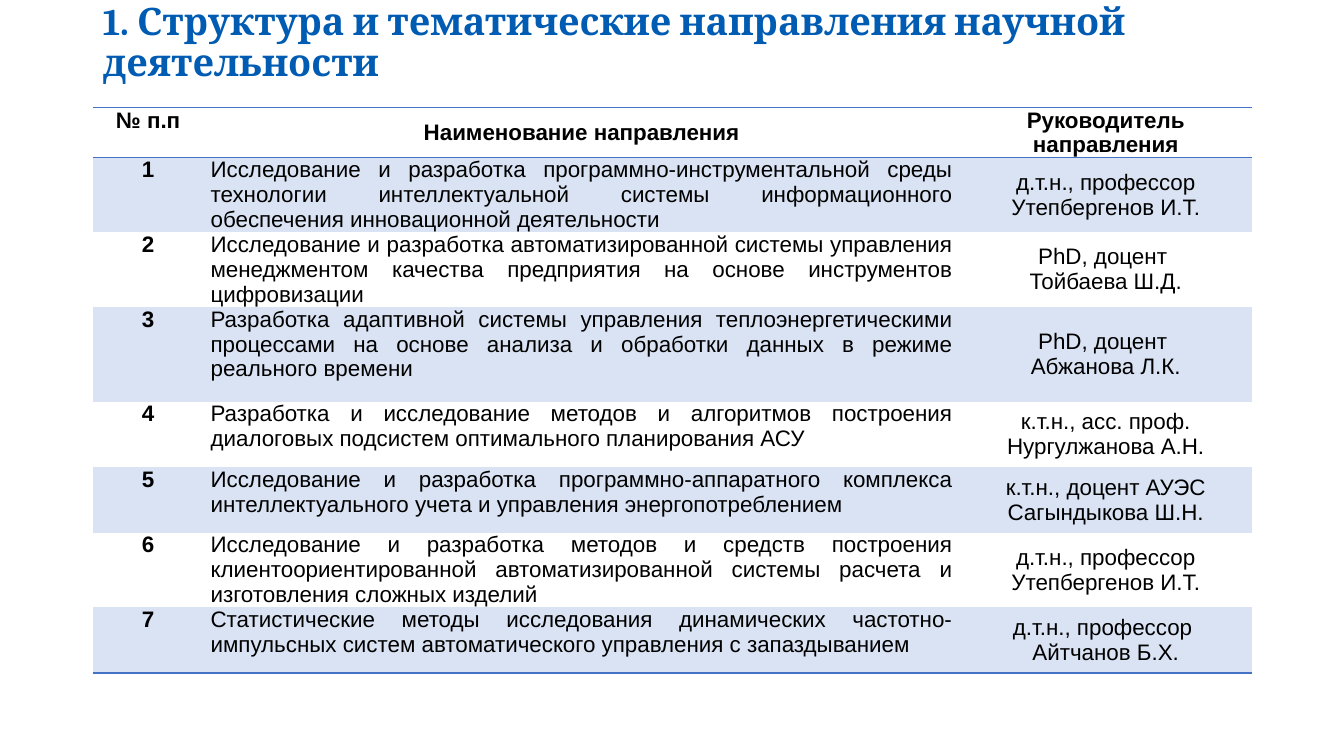
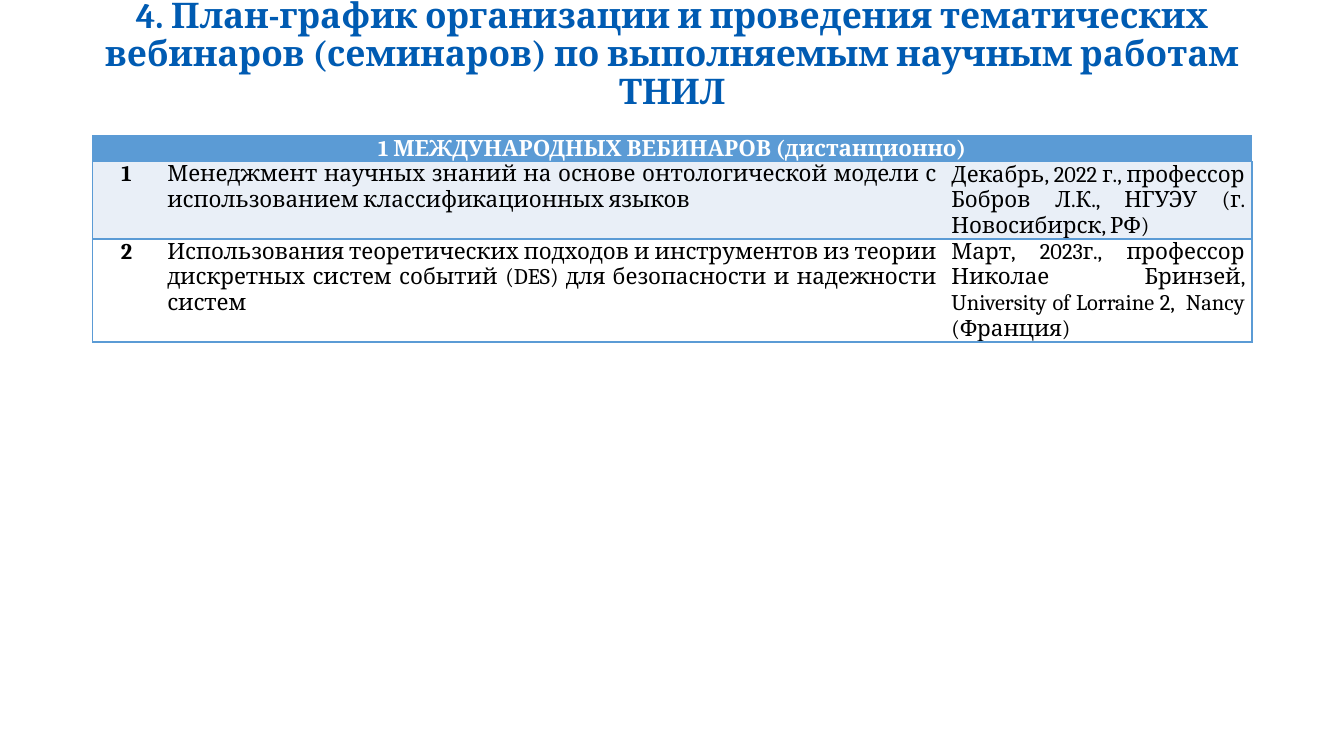
"""Build two slides on research directions and planned webinars."""
from dataclasses import dataclass

import pptx
import pptx.dml.color
import pptx.enum.text
import pptx.oxml
import pptx.oxml.ns
import pptx.util

WIDE = pptx.util.Inches(13.33)
HIGH = pptx.util.Inches(7.5)
LEFT = 6.9
SPAN = 86.25
INK = "000000"
WHITE = "FFFFFF"
NAVY = "005BB2"
BLUE = "4472C4"
PALE = "DAE3F3"
SKY = "5B9BD5"
MIST = "E9EFF7"
SERIF = "Cambria"
SANS = "Arial"
BARE = "{2D5ABB26-0587-4C30-8999-92F81FD0307C}"
ALIGN = pptx.enum.text.PP_ALIGN
ANCHOR = pptx.enum.text.MSO_ANCHOR


@dataclass(frozen=True)
class Title:
    text: str
    top: float
    width: float
    height: float
    size: float
    align: ALIGN
    anchor: ANCHOR


@dataclass(frozen=True)
class Style:
    font: str
    line: str
    band: str
    head: str | None
    label: str
    closed: bool
    last: ALIGN


@dataclass(frozen=True)
class Grid:
    top: float
    cols: tuple[float, ...]
    rows: tuple[float, ...]
    header: tuple[str, ...]
    items: tuple[tuple[str, str], ...]
    style: Style


@dataclass(frozen=True)
class Page:
    title: Title
    grid: Grid


PAGES = (
    Page(
        Title("1. Структура и тематические направления научной деятельности",
              4.27, 87.15, 7.6, 27, ALIGN.LEFT, ANCHOR.BOTTOM),
        Grid(
            14.27, (1.1, 7.5, 2.9),
            (4.67, 8.93, 8.67, 12.53, 8.67, 8.67, 9.33, 8.67),
            ("№ п.п", "Наименование направления", "Руководитель направления"),
            (
                ("Исследование и разработка программно-инструментальной среды технологии "
                 "интеллектуальной системы информационного обеспечения инновационной деятельности",
                 "д.т.н., профессор Утепбергенов И.Т."),
                ("Исследование и разработка автоматизированной системы управления менеджментом "
                 "качества предприятия на основе инструментов цифровизации",
                 "PhD, доцент \nТойбаева Ш.Д."),
                ("Разработка адаптивной системы управления теплоэнергетическими процессами "
                 "на основе анализа и обработки данных в режиме реального времени",
                 "PhD, доцент \nАбжанова Л.К."),
                ("Разработка и исследование методов и алгоритмов построения диалоговых "
                 "подсистем оптимального планирования АСУ",
                 "к.т.н., асс. проф. Нургулжанова А.Н."),
                ("Исследование и разработка программно-аппаратного комплекса "
                 "интеллектуального учета и управления энергопотреблением",
                 "к.т.н., доцент АУЭС Сагындыкова Ш.Н."),
                ("Исследование и разработка методов и средств построения клиентоориентированной "
                 "автоматизированной системы расчета и изготовления сложных изделий",
                 "д.т.н., профессор Утепбергенов И.Т."),
                ("Статистические методы исследования динамических частотно-импульсных систем "
                 "автоматического управления с запаздыванием",
                 "д.т.н., профессор \nАйтчанов Б.Х."),
            ),
            Style(SANS, BLUE, PALE, None, INK, False, ALIGN.CENTER),
        ),
    ),
    Page(
        Title("4. План-график организации и проведения тематических вебинаров (семинаров) "
              "по выполняемым научным работам ТНИЛ",
              2.93, SPAN, 8.67, 25.2, ALIGN.CENTER, ANCHOR.MIDDLE),
        Grid(
            18, (0.67, 7.78, 3.05), (2.93, 2.93, 2.93),
            ("1 МЕЖДУНАРОДНЫХ ВЕБИНАРОВ (дистанционно)",),
            (
                ("Менеджмент научных знаний на основе онтологической модели "
                 "с использованием классификационных языков",
                 "Декабрь, 2022 г., профессор Бобров Л.К., НГУЭУ (г. Новосибирск, РФ)"),
                ("Использования теоретических подходов и инструментов из теории дискретных "
                 "систем событий (DES) для безопасности и надежности систем",
                 "Март, 2023г., профессор Николае Бринзей, University of Lorraine 2,  Nancy (Франция)"),
            ),
            Style(SERIF, SKY, MIST, SKY, WHITE, True, ALIGN.JUSTIFY),
        ),
    ),
)


def across(share: float) -> int:
    """Turn a percentage of the slide width into a length."""
    return round(WIDE * share / 100)


def down(share: float) -> int:
    """Turn a percentage of the slide height into a length."""
    return round(HIGH * share / 100)


def shade(code: str) -> pptx.dml.color.RGBColor:
    """Turn a hex string into a colour."""
    return pptx.dml.color.RGBColor.from_string(code)


def write(frame, text: str, font: str, size: float, ink: str, bold: bool, align: ALIGN) -> None:
    """Write each line of the text as a paragraph with one run."""
    for index, line in enumerate(text.split("\n")):
        para = frame.add_paragraph() if index else frame.paragraphs[0]
        para.alignment = align
        run = para.add_run()
        run.text = line
        run.font.name = font
        run.font.size = pptx.util.Pt(size)
        run.font.bold = bold
        run.font.color.rgb = shade(ink)


def head(slide, title: Title) -> None:
    """Place and format the slide title."""
    shape = slide.shapes.title
    shape.left, shape.top = across(LEFT), down(title.top)
    shape.width, shape.height = across(title.width), down(title.height)
    frame = shape.text_frame
    frame.auto_size = pptx.enum.text.MSO_AUTO_SIZE.NONE
    frame.word_wrap = True
    frame.vertical_anchor = title.anchor
    write(frame, title.text, SERIF, title.size, NAVY, True, title.align)
    frame.paragraphs[0].line_spacing = 0.9


def edge(cell, sides: str, code: str) -> None:
    """Draw one-point borders on the named sides of a cell."""
    props = cell._tc.get_or_add_tcPr()
    for side in sides:
        props.append(pptx.oxml.parse_xml(
            f'<a:ln{side} {pptx.oxml.ns.nsdecls("a")} w="{pptx.util.Pt(1)}">'
            f'<a:solidFill><a:srgbClr val="{code}"/></a:solidFill></a:ln{side}>'))


def sides(row: int, col: int, grid: Grid) -> str:
    """Name the bordered sides of a cell, in schema order."""
    if grid.style.closed:
        left = "L" if col == 0 else ""
        right = "R" if col == len(grid.cols) - 1 else ""
        return left + right + "TB"
    if row == 0:
        return "TB"
    return "B" if row == len(grid.rows) - 1 else ""


def paint(cell, code: str | None) -> None:
    """Fill a cell, or leave it clear."""
    if code is None:
        cell.fill.background()
    else:
        cell.fill.solid()
        cell.fill.fore_color.rgb = shade(code)


def draw(slide, grid: Grid) -> None:
    """Draw the numbered table."""
    style = grid.style
    shape = slide.shapes.add_table(
        len(grid.rows), len(grid.cols), across(LEFT), down(grid.top),
        across(SPAN), down(sum(grid.rows)))
    table = shape.table
    table._tbl.tblPr.find(pptx.oxml.ns.qn("a:tableStyleId")).text = BARE
    for col, part in zip(table.columns, grid.cols):
        col.width = across(SPAN * part / sum(grid.cols))
    for row, share in zip(table.rows, grid.rows):
        row.height = down(share)
    if len(grid.header) == 1:
        table.cell(0, 0).merge(table.cell(0, len(grid.cols) - 1))
    body = [(str(num), *item) for num, item in enumerate(grid.items, 1)]
    texts = [grid.header, *body]
    for r, row in enumerate(table.rows):
        for c, cell in enumerate(row.cells):
            edge(cell, sides(r, c, grid), style.line)
            paint(cell, style.head if r == 0 else style.band if r % 2 else None)
            cell.margin_left = cell.margin_right = pptx.util.Inches(0.07)
            cell.margin_top = cell.margin_bottom = 0
            if c >= len(texts[r]):
                continue
            middle = c == 2 or (r == 0 and c == 1)
            cell.vertical_anchor = ANCHOR.MIDDLE if middle else ANCHOR.TOP
            align = ALIGN.CENTER if r == 0 else (ALIGN.CENTER, ALIGN.JUSTIFY, style.last)[c]
            ink = INK if r else style.label
            write(cell.text_frame, texts[r][c], style.font, 16, ink, r == 0 or c == 0, align)


def main() -> None:
    """Build and save the slides."""
    deck = pptx.Presentation()
    deck.slide_width, deck.slide_height = WIDE, HIGH
    for page in PAGES:
        slide = deck.slides.add_slide(deck.slide_layouts[5])
        head(slide, page.title)
        draw(slide, page.grid)
    deck.save("out.pptx")


if __name__ == "__main__":
    main()
